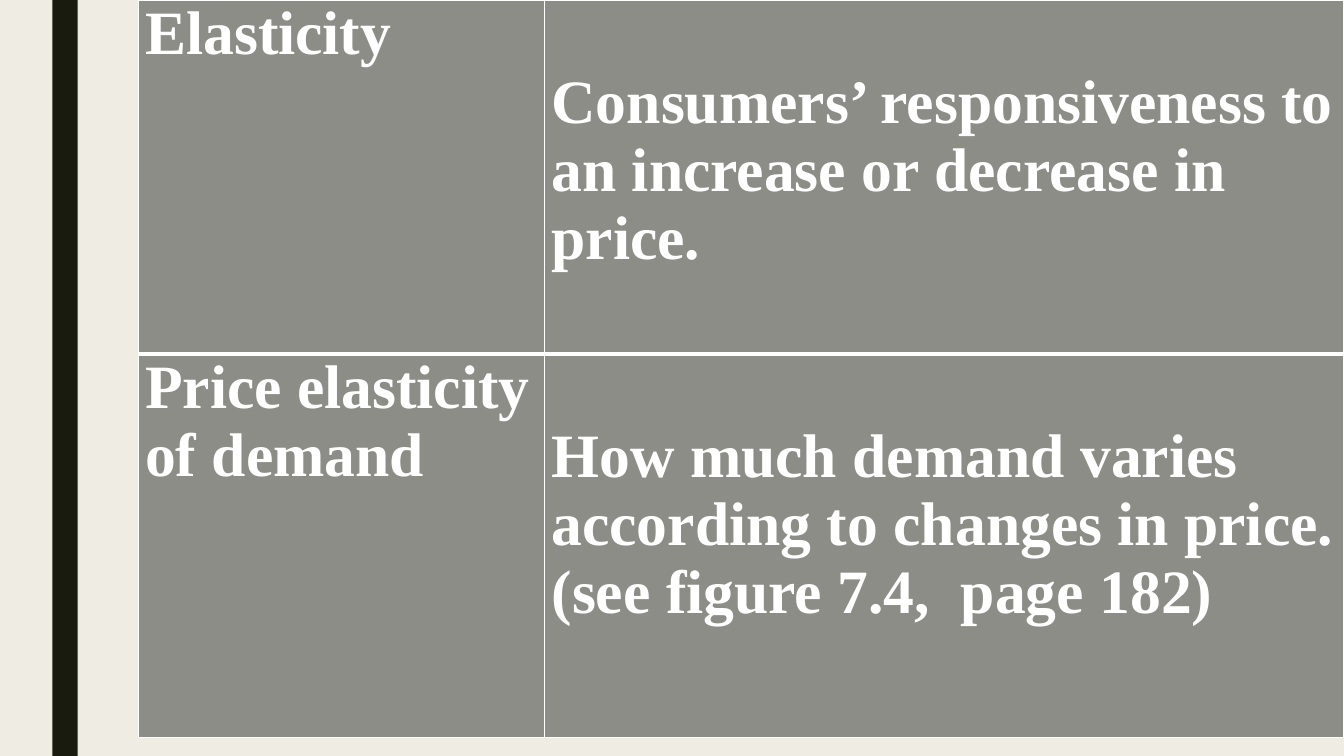
from lxml.etree import SubElement
from pptx import Presentation
from pptx.dml.color import RGBColor
from pptx.enum.shapes import MSO_SHAPE as Shape
from pptx.oxml.ns import qn
from pptx.util import Inches, Pt

TERMS = [
    ("Elasticity",
     "Consumers’ responsiveness to an increase or decrease in price."),
    ("Price elasticity of demand",
     "How much demand varies according to changes in price.\n"
     "(see figure 7.4,  page 182)"),
]
COLUMN_WIDTHS = (4.03, 7.93)
ROW_HEIGHTS = (3.51, 3.81)
TOP_MARGINS = (0, 0.68)
FONT = "Times New Roman"
CREAM = RGBColor(0xEF, 0xED, 0xE3)
DARK = RGBColor(0x19, 0x1B, 0x0E)
GRAY = RGBColor(0x8C, 0x8D, 0x86)
WHITE = RGBColor(0xFF, 0xFF, 0xFF)


def add_border(cell, side, points):
    line = SubElement(cell._tc.get_or_add_tcPr(), qn(f"a:ln{side}"), w=str(Pt(points)))
    fill = SubElement(line, qn("a:solidFill"))
    SubElement(fill, qn("a:srgbClr"), val=str(WHITE))


def format_cell(cell, text, row, top_margin):
    cell.margin_left = cell.margin_right = Inches(0.07)
    cell.margin_top, cell.margin_bottom = Inches(top_margin), 0
    widths = {"L": 1, "R": 1, "T": 3 if row else 1, "B": 1 if row else 3}
    for side, points in widths.items():
        add_border(cell, side, points)
    cell.fill.solid()
    cell.fill.fore_color.rgb = GRAY
    cell.text_frame.text = text
    for para in cell.text_frame.paragraphs:
        for span in para.runs:
            span.font.name = FONT
            span.font.size = Pt(44)
            span.font.bold = True
            span.font.color.rgb = WHITE


def main():
    deck = Presentation()
    deck.slide_width, deck.slide_height = Inches(13.33), Inches(7.5)
    page = deck.slides.add_slide(deck.slide_layouts[6])
    page.background.fill.solid()
    page.background.fill.fore_color.rgb = CREAM

    bar = page.shapes.add_shape(Shape.RECTANGLE, Inches(0.52), 0, Inches(0.25), Inches(7.5))
    bar.shadow.inherit = False
    bar.fill.solid()
    bar.fill.fore_color.rgb = DARK
    bar.line.fill.background()

    table = page.shapes.add_table(
        len(TERMS), len(COLUMN_WIDTHS), Inches(1.37), 0,
        Inches(sum(COLUMN_WIDTHS)), Inches(sum(ROW_HEIGHTS))).table
    for column, width in zip(table.columns, COLUMN_WIDTHS):
        column.width = Inches(width)
    for row, (texts, height) in enumerate(zip(TERMS, ROW_HEIGHTS)):
        table.rows[row].height = Inches(height)
        for column, (text, margin) in enumerate(zip(texts, TOP_MARGINS)):
            format_cell(table.cell(row, column), text, row, margin)

    deck.save("out.pptx")


if __name__ == "__main__":
    main()
